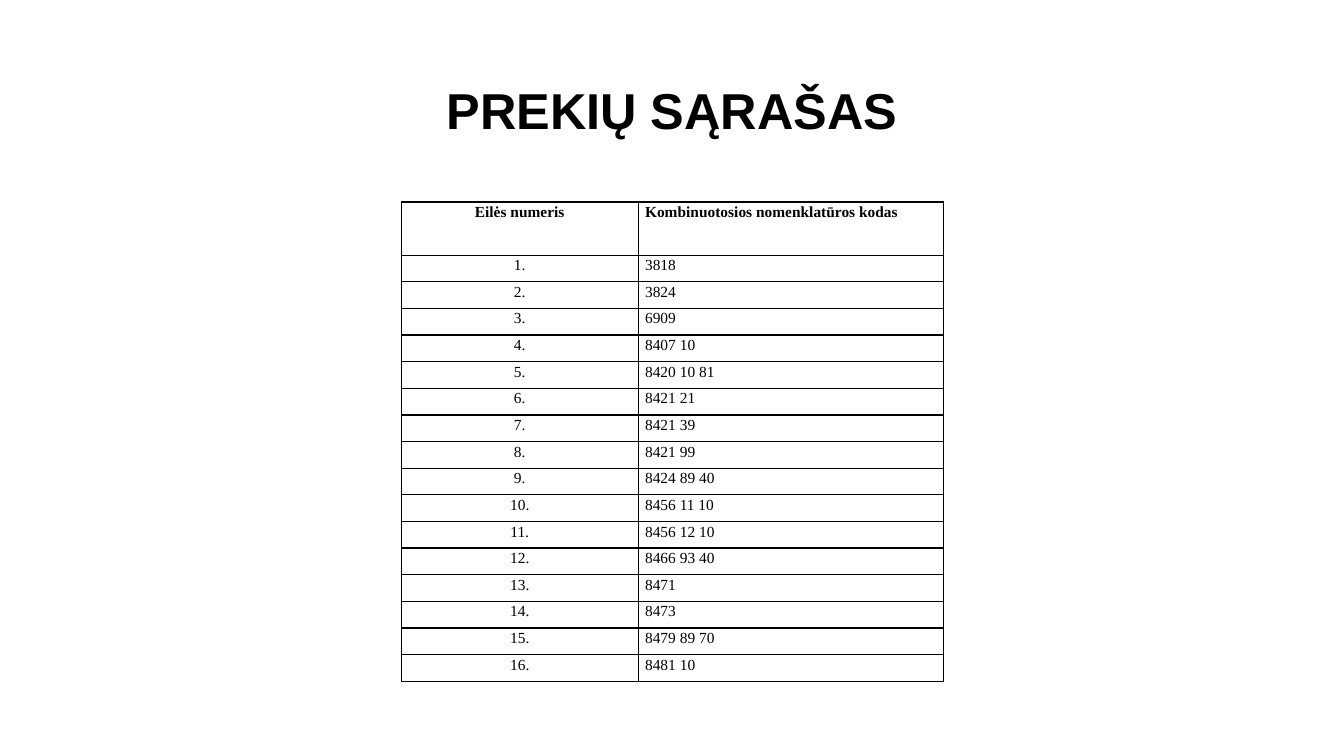
from lxml import etree
from pptx import Presentation
from pptx.dml.color import RGBColor
from pptx.enum import text
from pptx.oxml import ns
from pptx.util import Cm, Pt

BLACK = "000000"
HEADINGS = ("Eilės numeris", "Kombinuotosios nomenklatūros kodas")
CODES = (
    "3818", "3824", "6909", "8407 10", "8420 10 81", "8421 21", "8421 39", "8421 99",
    "8424 89 40", "8456 11 10", "8456 12 10", "8466 93 40", "8471", "8473",
    "8479 89 70", "8481 10",
)
ALIGNMENTS = (text.PP_ALIGN.CENTER, text.PP_ALIGN.JUSTIFY)
NUMBER_COLUMN_SHARE = 0.4375
HEADER_HEIGHT = Cm(1.34)


def color(hex_code):
    return RGBColor.from_string(hex_code)


def write(paragraph, words, font_name, size, bold, alignment, line_spacing):
    paragraph.alignment = alignment
    paragraph.line_spacing = line_spacing
    run = paragraph.add_run()
    run.text = words
    run.font.name = font_name
    run.font.size = Pt(size)
    run.font.bold = bold
    run.font.color.rgb = color(BLACK)


def add_border(cell, hex_code, width):
    """Draw a solid line on all four sides; lines must precede the fill in the XML."""
    properties = cell._tc.get_or_add_tcPr()
    for index, side in enumerate(("lnL", "lnR", "lnT", "lnB")):
        line = etree.Element(ns.qn(f"a:{side}"), w=str(Pt(width)))
        fill = etree.SubElement(line, ns.qn("a:solidFill"))
        etree.SubElement(fill, ns.qn("a:srgbClr"), val=hex_code)
        properties.insert(index, line)


def add_title(slide, left, top, width, height):
    frame = slide.shapes.add_textbox(left, top, width, height).text_frame
    frame.word_wrap = True
    frame.vertical_anchor = text.MSO_ANCHOR.MIDDLE
    write(frame.paragraphs[0], "PREKIŲ SĄRAŠAS", "Arial", 36, True,
          text.PP_ALIGN.CENTER, 0.9)


def fill_cell(cell, words, bold, alignment):
    cell.margin_left = cell.margin_right = Cm(0.17)
    cell.margin_top = Cm(0.02)
    cell.margin_bottom = 0
    cell.fill.background()
    add_border(cell, BLACK, 1)
    paragraph = cell.text_frame.paragraphs[0]
    write(paragraph, words, "Times New Roman", 11, bold, alignment, 1.06)
    paragraph.space_after = Pt(8)


def add_goods_table(slide, left, top, width, height):
    rows = [HEADINGS] + [(f"{number}.", code) for number, code in enumerate(CODES, 1)]
    table = slide.shapes.add_table(
        len(rows), len(HEADINGS), left, top, width, height).table
    table.first_row = table.horz_banding = False
    table.columns[0].width = int(width * NUMBER_COLUMN_SHARE)
    table.columns[1].width = width - table.columns[0].width
    for row_index, row in enumerate(rows):
        is_header = row_index == 0
        table.rows[row_index].height = (
            HEADER_HEIGHT if is_header else (height - HEADER_HEIGHT) // len(CODES))
        for column_index, words in enumerate(row):
            fill_cell(table.cell(row_index, column_index), words, is_header,
                      ALIGNMENTS[column_index])


def main():
    presentation = Presentation()
    presentation.slide_width = Cm(33.87)
    presentation.slide_height = Cm(19.05)
    slide = presentation.slides.add_slide(presentation.slide_layouts[6])
    add_title(slide, Cm(2.33), Cm(1.01), Cm(29.21), Cm(3.68))
    add_goods_table(slide, Cm(10.11), Cm(5.09), Cm(13.66), Cm(12.09))
    presentation.save("out.pptx")


if __name__ == "__main__":
    main()
